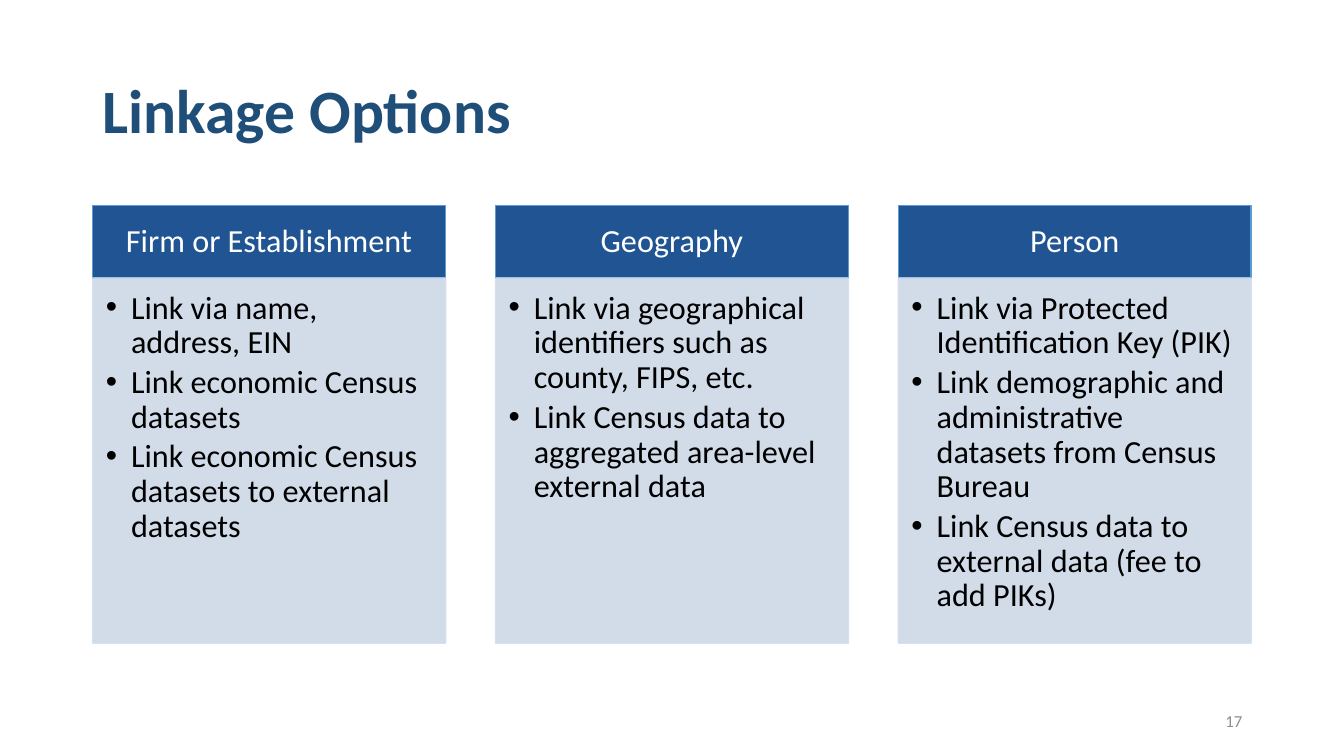
from dataclasses import dataclass

from lxml import etree
from pptx import Presentation
from pptx.dml.color import RGBColor
from pptx.enum.shapes import MSO_SHAPE
from pptx.enum.text import MSO_ANCHOR, PP_ALIGN
from pptx.oxml.ns import qn
from pptx.util import Inches, Pt

RECTANGLE = MSO_SHAPE.RECTANGLE
TOP, MIDDLE = MSO_ANCHOR.TOP, MSO_ANCHOR.MIDDLE
LEFT, CENTER, RIGHT = PP_ALIGN.LEFT, PP_ALIGN.CENTER, PP_ALIGN.RIGHT


@dataclass(frozen=True)
class Theme:
    font: str = "Calibri"
    title_color: str = "1F4E79"
    panel_color: str = "205493"
    header_line: str = "5B9BD5"
    body_line: str = "D2DEEF"
    header_text: str = "FFFFFF"
    body_text: str = "000000"
    number_color: str = "8C8C8C"
    title_size: int = 44
    panel_size: int = 23
    number_size: int = 12


THEME = Theme()
LINKAGE_OPTIONS = [
    ("Firm or Establishment", [
        "Link via name, address, EIN",
        "Link economic Census datasets",
        "Link economic Census datasets to external datasets",
    ]),
    ("Geography", [
        "Link via geographical identifiers such as county, FIPS, etc.",
        "Link Census data to aggregated area-level external data",
    ]),
    ("Person", [
        "Link via Protected Identification Key (PIK)",
        "Link demographic and administrative datasets from Census Bureau",
        "Link Census data to external data (fee to add PIKs)",
    ]),
]


def set_attributes(target, values):
    for name, value in values.items():
        setattr(target, name, value)


def add_bullet(para, indent):
    properties = para._p.get_or_add_pPr()
    properties.set("marL", str(Inches(indent)))
    properties.set("indent", str(-Inches(indent)))
    etree.SubElement(properties, qn("a:buFont"), typeface="Arial")
    etree.SubElement(properties, qn("a:buChar"), char="•")


def write_text(shape, lines, size, color, anchor=MIDDLE, align=LEFT, bold=False,
               insets=(0.1, 0.05, 0.1, 0.05), spacing=0.9, after=0, bulleted=False):
    """Fill a shape with one paragraph per line; insets run left, top, right, bottom."""
    frame = shape.text_frame
    sides = ("margin_left", "margin_top", "margin_right", "margin_bottom")
    set_attributes(frame, {"word_wrap": True, "vertical_anchor": anchor})
    set_attributes(frame, dict(zip(sides, map(Inches, insets))))
    for index, line in enumerate(lines):
        para = frame.paragraphs[0] if index == 0 else frame.add_paragraph()
        if bulleted:
            add_bullet(para, 0.25)
        set_attributes(para, {"alignment": align, "line_spacing": spacing,
                              "space_after": Pt(after)})
        span = para.add_run()
        span.text = line
        set_attributes(span.font, {"name": THEME.font, "size": Pt(size), "bold": bold})
        span.font.color.rgb = RGBColor.from_string(color)


def add_panel(page, box, fill, line, fill_alpha=100, line_alpha=100):
    panel = page.shapes.add_shape(RECTANGLE, *map(Inches, box))
    panel.shadow.inherit = False
    panel.fill.solid()
    panel.fill.fore_color.rgb = RGBColor.from_string(fill)
    panel.line.color.rgb = RGBColor.from_string(line)
    panel.line.width = Pt(1)
    colors = panel._element.spPr.iter(qn("a:srgbClr"))
    for color, alpha in zip(list(colors), (fill_alpha, line_alpha)):
        if alpha < 100:
            etree.SubElement(color, qn("a:alpha"), val=str(alpha * 1000))
    return panel


def add_title(page, box, title):
    title_box = page.shapes.add_textbox(*map(Inches, box))
    write_text(title_box, [title], THEME.title_size, THEME.title_color, bold=True)


def add_option(page, box, heading, points):
    """Place a heading bar above a tinted panel of bullets."""
    left, top, width, height = box
    bar_height = 0.72
    header = add_panel(page, (left, top, width, bar_height),
                       THEME.panel_color, THEME.header_line)
    write_text(header, [heading], THEME.panel_size, THEME.header_text,
               align=CENTER, insets=(0.18, 0.1, 0.18, 0.1))
    body = add_panel(page, (left, top + bar_height, width, height - bar_height),
                     THEME.panel_color, THEME.body_line, fill_alpha=20, line_alpha=90)
    write_text(body, points, THEME.panel_size, THEME.body_text, anchor=TOP,
               insets=(0.13, 0.13, 0.18, 0.2), after=3.45, bulleted=True)


def add_options(page, box, options):
    left, top, width, height = box
    option_width = 3.5
    step = (width - option_width) / (len(options) - 1)
    for index, (heading, points) in enumerate(options):
        add_option(page, (left + index * step, top, option_width, height),
                   heading, points)


def add_page_number(page, box, number):
    number_box = page.shapes.add_textbox(*map(Inches, box))
    write_text(number_box, [number], THEME.number_size, THEME.number_color,
               align=RIGHT, spacing=1.0)


def main():
    deck = Presentation()
    set_attributes(deck, {"slide_width": Inches(13.33), "slide_height": Inches(7.5)})
    page = deck.slides.add_slide(deck.slide_layouts[6])
    add_title(page, (0.92, 0.4, 11.5, 1.45), "Linkage Options")
    add_options(page, (0.92, 2.04, 11.49, 4.34), LINKAGE_OPTIONS)
    add_page_number(page, (9.42, 6.95, 3, 0.4), "17")
    deck.save("out.pptx")


if __name__ == "__main__":
    main()
